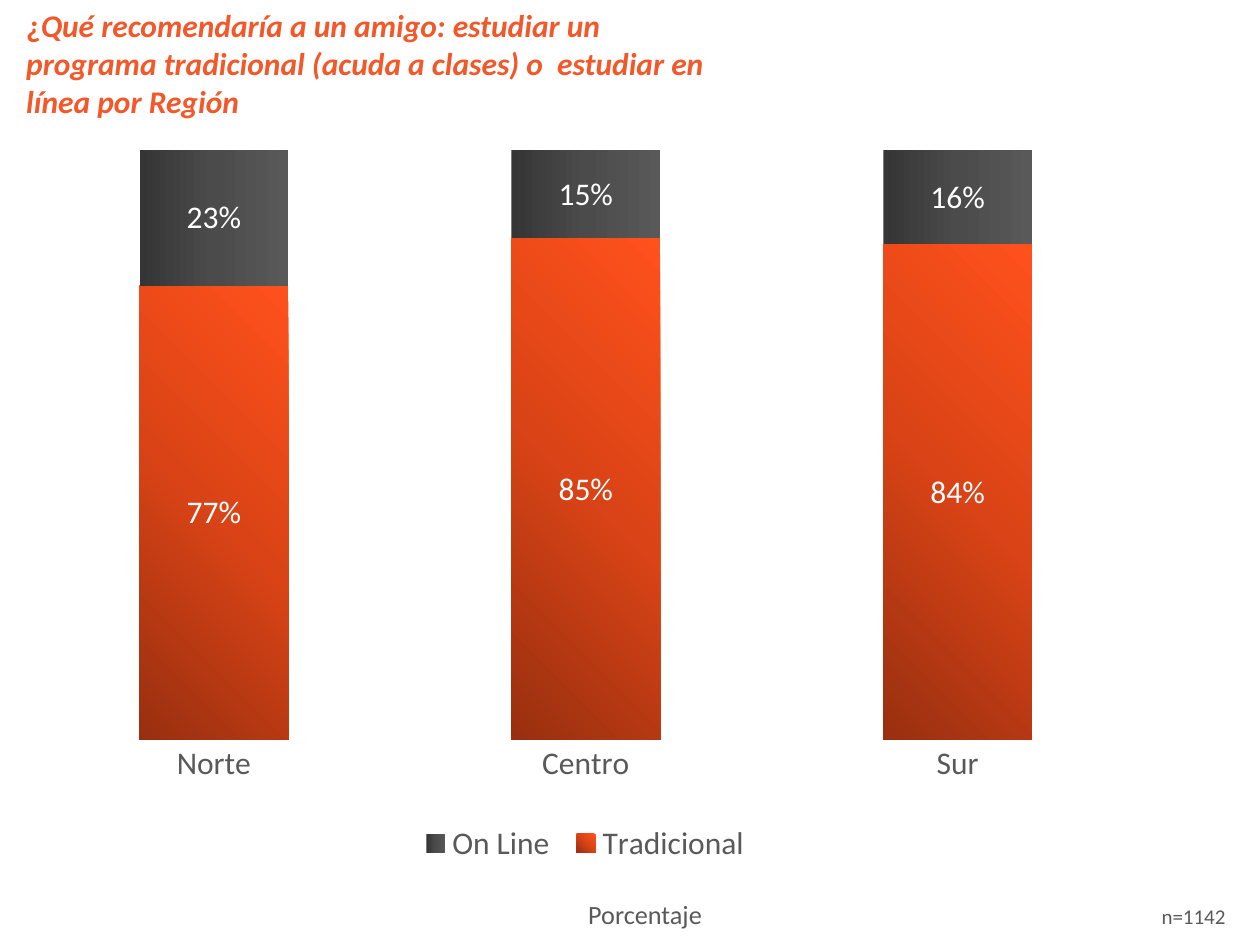
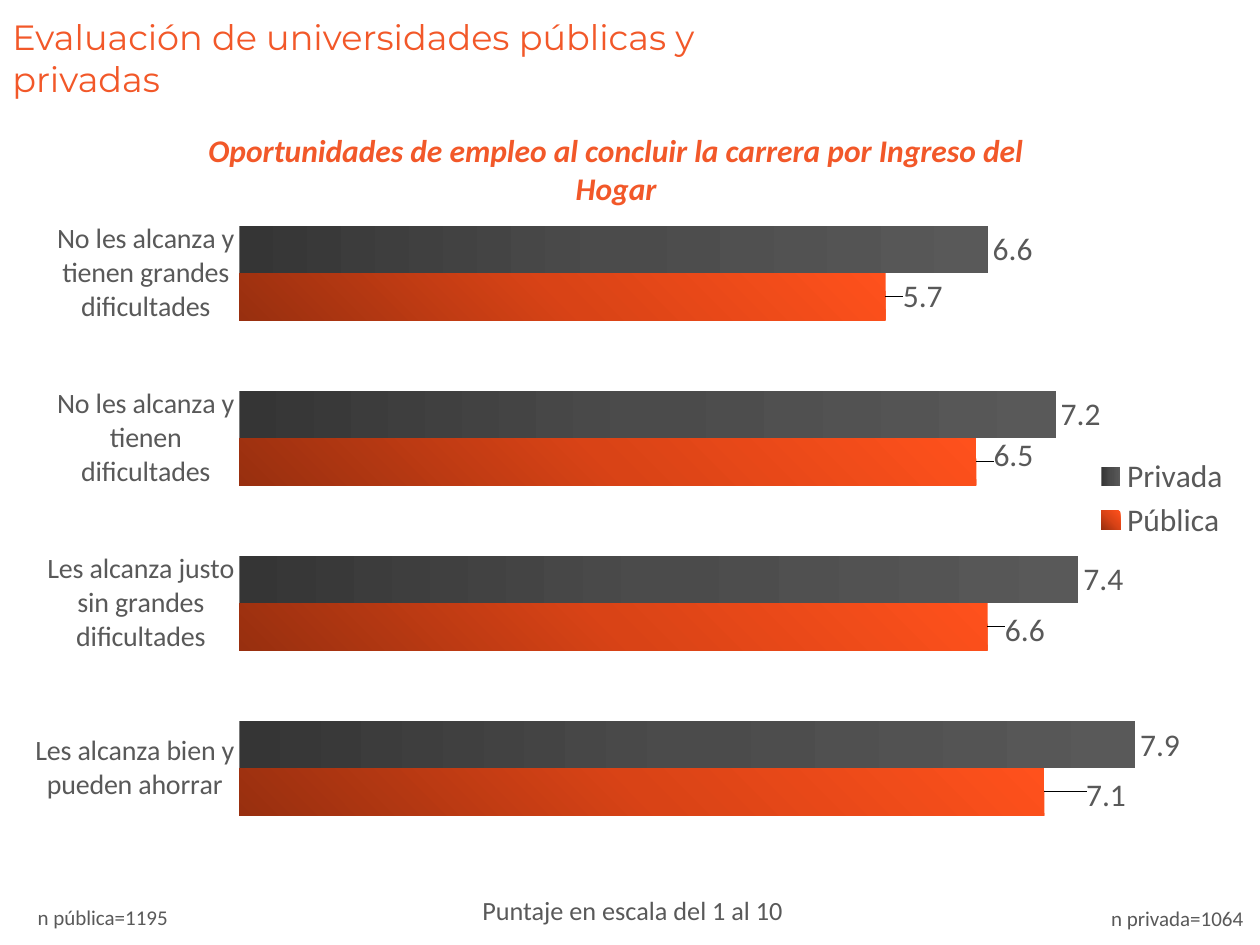
from pptx import Presentation
from pptx.chart.data import CategoryChartData
from pptx.dml.color import RGBColor
from pptx.enum.chart import (XL_CHART_TYPE, XL_LABEL_POSITION,
                             XL_LEGEND_POSITION, XL_TICK_MARK)
from pptx.enum.text import MSO_AUTO_SIZE, PP_ALIGN
from pptx.oxml import parse_xml
from pptx.oxml.ns import nsdecls, qn
from pptx.util import Inches, Pt

STACKED_COLUMNS = XL_CHART_TYPE.COLUMN_STACKED_100
CLUSTERED_BARS = XL_CHART_TYPE.BAR_CLUSTERED
OUTSIDE_END = XL_LABEL_POSITION.OUTSIDE_END
CENTER = XL_LABEL_POSITION.CENTER
LEGEND_RIGHT = XL_LEGEND_POSITION.RIGHT
NO_TICKS = XL_TICK_MARK.NONE
FIT_SHAPE = MSO_AUTO_SIZE.SHAPE_TO_FIT_TEXT
ALIGN_LEFT, ALIGN_CENTER = PP_ALIGN.LEFT, PP_ALIGN.CENTER

ORANGE, GRAY, WHITE = "F25829", "595959", "FFFFFF"
BODY_FONT, TITLE_FONT = "Calibri", "Montserrat"
ORANGE_STOPS = ("982F0F", "D94316", "FF511C")
GRAY_STOPS = ("353535", "4B4B4B", "595959")
FROM_CORNER = ('<a:path path="circle">'
               '<a:fillToRect l="0" t="100000" r="100000" b="0"/></a:path>')
ACROSS = '<a:lin ang="0" scaled="0"/>'
SERIES_FILLS = ((ORANGE_STOPS, FROM_CORNER), (GRAY_STOPS, ACROSS))


def rgb(hex_color):
    return RGBColor.from_string(hex_color)


def style_font(font, size, color, name=BODY_FONT, bold=False, italic=False):
    font.name, font.size = name, Pt(size)
    font.bold, font.italic = bold, italic
    font.color.rgb = rgb(color)


def set_layout(parent, index, **fractions):
    """Place a chart part by fractions of the chart area."""
    for old in parent.findall(qn("c:layout")):
        parent.remove(old)
    modes = ""
    if "w" in fractions:
        modes = '<c:xMode val="edge"/><c:yMode val="edge"/>'
        if parent.tag == qn("c:plotArea"):
            modes = '<c:layoutTarget val="inner"/>' + modes
    sizes = "".join(f'<c:{key} val="{value}"/>'
                    for key, value in fractions.items())
    parent.insert(index, parse_xml(
        f'<c:layout {nsdecls("c")}><c:manualLayout>{modes}{sizes}'
        '</c:manualLayout></c:layout>'))


def gradient_fill(series, stops, direction):
    series.format.fill.background()
    properties = series._element.find(qn("c:spPr"))
    properties.remove(properties.find(qn("a:noFill")))
    stop_xml = "".join(
        f'<a:gs pos="{i * 50000}"><a:srgbClr val="{color}"/></a:gs>'
        for i, color in enumerate(stops))
    properties.insert(0, parse_xml(
        f'<a:gradFill {nsdecls("a")} rotWithShape="1">'
        f'<a:gsLst>{stop_xml}</a:gsLst>{direction}</a:gradFill>'))


class SurveyDeck:
    """Holds the shared style and the slide being filled."""

    def __init__(self):
        self.prs = Presentation()
        self.prs.slide_width, self.prs.slide_height = Inches(10), Inches(7.5)
        self.slide = None

    def new_slide(self):
        self.slide = self.prs.slides.add_slide(self.prs.slide_layouts[6])

    def text(self, content, left, top, width, height, size, color=GRAY,
             align=ALIGN_LEFT, **style):
        frame = self.slide.shapes.add_textbox(
            *map(Inches, (left, top, width, height))).text_frame
        frame.word_wrap, frame.auto_size = True, FIT_SHAPE
        frame.text = content
        paragraph = frame.paragraphs[0]
        paragraph.alignment = align
        style_font(paragraph.runs[0].font, size, color, **style)
        return paragraph

    def question(self, content, *box, italic=True, **style):
        return self.text(content, *box, 18, ORANGE, bold=True, italic=italic,
                         **style)

    def scale_note(self, content, *box):
        self.text(content, *box, 15)

    def sample_size(self, content, *box):
        self.text(content, *box, 12)

    def chart(self, kind, box, categories, results, plot_area, legend_area,
              number_format, top_value, category_size, label_color,
              label_position, overlap):
        data = CategoryChartData(number_format=number_format)
        data.categories = categories
        for name, values in results:
            data.add_series(name, values)
        chart = self.slide.shapes.add_chart(
            kind, *map(Inches, box), data).chart
        chart.has_title = False
        style_font(chart.font, 18, GRAY)

        values_axis, groups_axis = chart.value_axis, chart.category_axis
        values_axis.has_major_gridlines = False
        values_axis.minimum_scale, values_axis.maximum_scale = 0, top_value
        values_axis.visible = False
        groups_axis.major_tick_mark = NO_TICKS
        groups_axis.format.line.color.rgb = rgb(WHITE)
        style_font(groups_axis.tick_labels.font, category_size, GRAY)

        chart.has_legend = True
        chart.legend.position = LEGEND_RIGHT
        chart.legend.include_in_layout = False
        style_font(chart.legend.font, 18, GRAY)
        set_layout(chart.legend._element, 1, **legend_area)
        set_layout(chart._chartSpace.chart.plotArea, 0, **plot_area)

        plot = chart.plots[0]
        plot.vary_by_categories = False
        plot.gap_width, plot.overlap = 150, overlap
        for series, fill in zip(plot.series, SERIES_FILLS):
            gradient_fill(series, *fill)
            labels = series.data_labels
            labels.show_value = True
            labels.number_format = number_format
            labels.number_format_is_linked = False
            labels.position = label_position
            style_font(labels.font, 18, label_color)
        return chart

    def shift_labels(self, series, offsets):
        """Move each value label by (x, y) fractions of the chart."""
        for i in range(len(offsets)):
            label = series.points[i].data_label
            label.position = OUTSIDE_END
            style_font(label.font, 18, GRAY)
        for label, (x, y) in zip(series._element.iter(qn("c:dLbl")), offsets):
            set_layout(label, 1, x=x, y=y)


def study_mode_by_region(deck):
    deck.new_slide()
    deck.chart(
        STACKED_COLUMNS, (0, 1.19, 9.29, 5.95), ("Norte", "Centro", "Sur"),
        (("Tradicional", (0.77, 0.85, 0.84)),
         ("On Line", (0.23, 0.15, 0.16))),
        plot_area=dict(x=0.024, y=0, w=0.953, h=0.787),
        legend_area=dict(x=0.35, y=0.89, w=0.3, h=0.07),
        number_format="0%", top_value=1, category_size=18,
        label_color=WHITE, label_position=CENTER, overlap=100)
    question = deck.question("¿", 0.11, 0, 5.7, 1.01, italic=False)
    wording = question.add_run()
    wording.text = ("Qué recomendaría a un amigo: estudiar un programa "
                    "tradicional (acuda a clases) o  estudiar en línea "
                    "por Región")
    style_font(wording.font, 18, ORANGE, bold=True, italic=True)
    deck.scale_note("Porcentaje", 4.57, 7.08, 1.32, 0.35)
    deck.sample_size("n=1142", 9.12, 7.12, 0.75, 0.31)


def job_prospects_by_income(deck):
    deck.new_slide()
    chart = deck.chart(
        CLUSTERED_BARS, (0.28, 1.47, 9.72, 5.29),
        ("Les alcanza bien y pueden ahorrar",
         "Les alcanza justo sin grandes dificultades",
         "No les alcanza y tienen dificultades",
         "No les alcanza y tienen grandes dificultades"),
        (("Pública", (7.1, 6.6, 6.5, 5.7)),
         ("Privada", (7.9, 7.4, 7.2, 6.6))),
        plot_area=dict(x=0.166, y=0.008, w=0.834, h=0.991),
        legend_area=dict(x=0.85, y=0.4, w=0.14, h=0.14),
        number_format="0.0", top_value=9, category_size=16,
        label_color=GRAY, label_position=OUTSIDE_END, overlap=0)
    deck.shift_labels(chart.plots[0].series[0],
                      ((0.03, 0.005), (0.01, 0.005), (0.01, -0.01), (0.01, 0)))
    deck.scale_note("Puntaje en escala del 1 al 10", 3.73, 7.05, 2.66, 0.35)
    deck.sample_size("n pública=1195", 0.2, 7.13, 1.27, 0.3)
    deck.sample_size("n privada=1064", 8.72, 7.14, 1.27, 0.3)
    deck.question("Oportunidades de empleo al concluir la carrera por "
                  "Ingreso del Hogar", 1.47, 0.99, 6.84, 0.71,
                  align=ALIGN_CENTER)
    deck.text("Evaluación de universidades públicas y privadas",
              0, 0.07, 5.78, 0.77, 20, ORANGE, name=TITLE_FONT)


def main():
    deck = SurveyDeck()
    study_mode_by_region(deck)
    job_prospects_by_income(deck)
    deck.prs.save("out.pptx")


if __name__ == "__main__":
    main()
